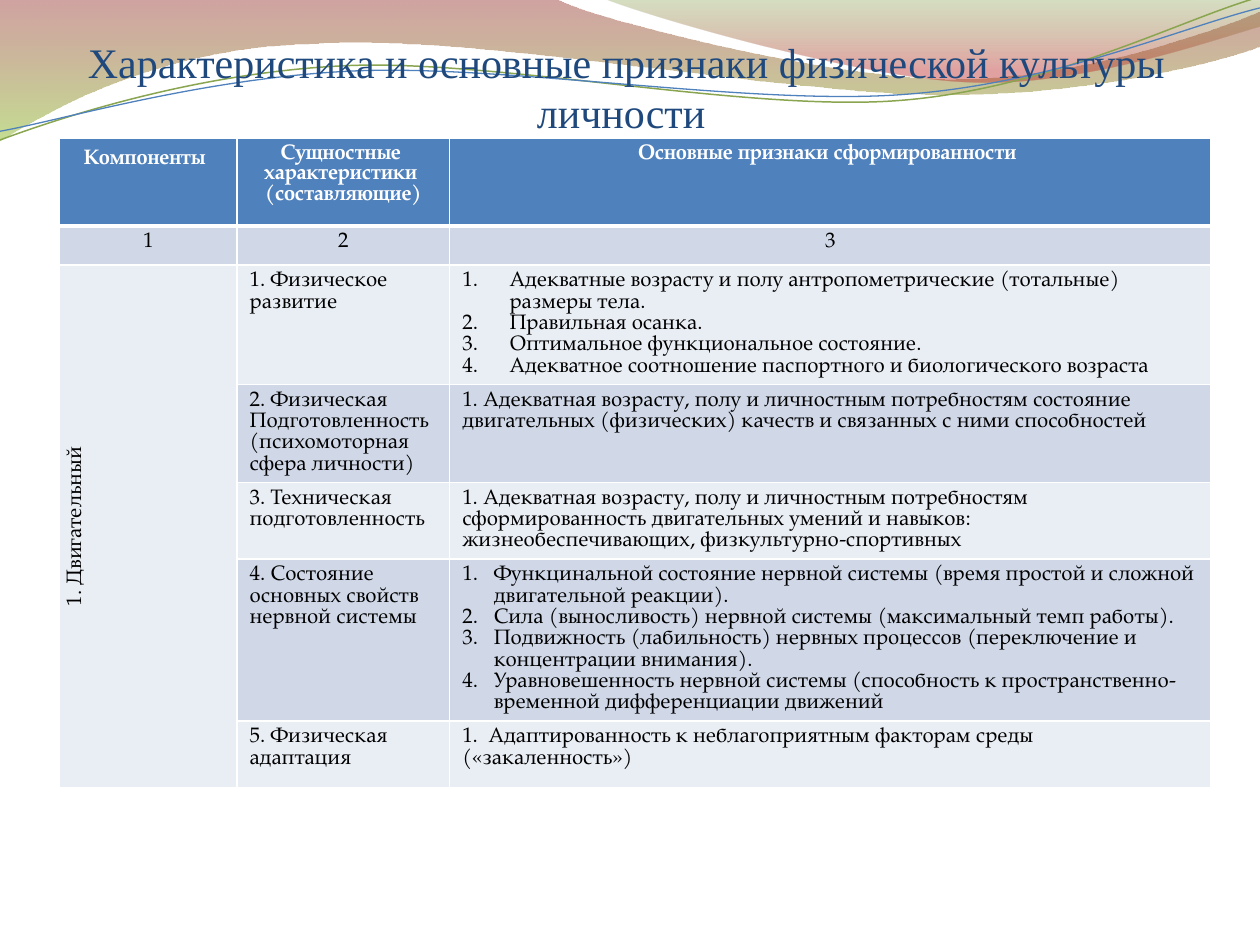
from lxml import etree
from pptx import Presentation
from pptx import util as u
from pptx.dml.color import RGBColor
from pptx.enum import text
from pptx.oxml import ns

Pt = u.Pt


def color(code):
    return RGBColor.from_string(code)


def node(parent, tag, **attrs):
    return etree.SubElement(parent, ns.qn(tag), attrs)


class Deck:
    head, body = "Times New Roman", "TeX Gyre Pagella"
    navy, blue, white, black = "1F497D", "4F81BD", "FFFFFF", "000000"
    bands = ("D0D8E8", "E9EDF4")
    pitch = 12.2

    def __init__(self, prs):
        self.slide = prs.slides.add_slide(prs.slide_layouts[6])

    def outline(self, start, parts, close):
        """Parts are lines (2 numbers) or Bezier curves (6 numbers)."""
        dots = [part[i:i + 2] for part in parts for i in range(0, len(part), 2)]
        free = self.slide.shapes.build_freeform(
            start[0] * 100, start[1] * 100, scale=Pt(1) / 100)
        free.add_line_segments([(x * 100, y * 100) for x, y in dots], close=close)
        shape = free.convert_to_shape()
        shape.shadow.inherit = False
        # Join each three steps of a curve into one Bezier
        steps = iter(list(shape._element.iter(ns.qn("a:lnTo"))))
        for part in parts:
            bend = next(steps)
            if len(part) == 6:
                bend.tag = ns.qn("a:cubicBezTo")
                for _ in range(2):
                    step = next(steps)
                    bend.append(step[0])
                    step.getparent().remove(step)
        return shape

    def wave(self, start, parts, stops):
        shape = self.outline(start, parts, True)
        shape.line.fill.background()
        shape.fill.gradient()
        shape.fill.gradient_angle = 270
        for stop, (pos, code, _) in zip(shape.fill.gradient_stops, stops):
            stop.position = pos
            stop.color.rgb = color(code)
        tags = shape._element.spPr.iter(ns.qn("a:srgbClr"))
        for tag, (_, _, alpha) in zip(tags, stops):
            node(tag, "a:alpha", val=str(alpha * 1000))

    def curve(self, start, parts, code, width):
        shape = self.outline(start, parts, False)
        shape.fill.background()
        shape.line.color.rgb = color(code)
        shape.line.width = Pt(width)

    def run(self, para, words, size, font, code, bold=False):
        run = para.add_run()
        run.text = words
        run.font.size, run.font.name, run.font.bold = Pt(size), font, bold
        run.font.color.rgb = color(code)

    def title(self, words, box):
        frame = self.slide.shapes.add_textbox(*map(Pt, box)).text_frame
        frame.word_wrap = True
        frame.vertical_anchor = text.MSO_ANCHOR.BOTTOM
        frame.margin_left = frame.margin_right = frame.margin_bottom = 0
        para = frame.paragraphs[0]
        para.alignment = text.PP_ALIGN.CENTER
        self.run(para, words, 24, self.head, self.navy)

    def number(self, para, indent):
        props = para._p.get_or_add_pPr()
        props.set("marL", str(Pt(indent)))
        props.set("indent", str(-Pt(indent)))
        node(props, "a:buFont", typeface="+mj-lt")
        node(props, "a:buAutoNum", type="arabicPeriod")

    def cell(self, cell, lines, fill, code, bold=False, center=False, indent=0, base=1):
        props = cell._tc.get_or_add_tcPr()
        for side, width in zip("LRTB", (1, 1, 1, base)):
            line = node(props, "a:ln" + side, w=str(Pt(width)))
            node(node(line, "a:solidFill"), "a:srgbClr", val=self.white)
        cell.fill.solid()
        cell.fill.fore_color.rgb = color(fill)
        for i, words in enumerate(lines):
            frame = cell.text_frame
            para = frame.add_paragraph() if i else frame.paragraphs[0]
            if center:
                para.alignment = text.PP_ALIGN.CENTER
            if not bold:
                para.line_spacing = Pt(self.pitch)
            if indent:
                self.number(para, indent)
            self.run(para, words, 12, self.body, code, bold)

    def table(self, top, rows, box, widths, heights):
        grid = self.slide.shapes.add_table(
            len(rows) + 1, len(top), *map(Pt, box)).table
        for col, width in zip(grid.columns, widths):
            col.width = Pt(width)
        for row, height in zip(grid.rows, heights):
            row.height = Pt(height)
        # Header row
        for c, lines in enumerate(top):
            self.cell(grid.cell(0, c), lines, self.blue, self.white, True, True, base=3)
        para = grid.cell(0, 0).text_frame.paragraphs[0]
        self.run(para, " ", 16, self.body, self.white, True)
        # Banded rows; the first column keeps the light band below the numbers
        for r, (indent, *cells) in enumerate(rows):
            for c, lines in enumerate(cells):
                band = self.bands[1 if r and not c else r % 2]
                self.cell(grid.cell(r + 1, c), lines, band, self.black,
                          center=not r or not c, indent=indent if c == 2 else 0)
        # Upright label over all the trait rows
        label = grid.cell(2, 0)
        label.merge(grid.cell(len(rows), 0))
        label.vertical_anchor = text.MSO_ANCHOR.MIDDLE
        label._tc.get_or_add_tcPr().set("vert", "vert270")


TOP = [
    ["Компоненты"],
    ["Сущностные ", "характеристики ", "(составляющие)"],
    ["Основные признаки сформированности "],
]
# Number indent, then the lines of each cell
ROWS = [
    (0, ["1"], ["2"], ["3"]),
    (27, ["1. Двигательный"], ["1. Физическое развитие"], [
        "Адекватные возрасту и полу антропометрические (тотальные) размеры тела.",
        "Правильная осанка.",
        "Оптимальное функциональное состояние.",
        "Адекватное соотношение паспортного и биологического возраста"]),
    (0, [], ["2. Физическая", "Подготовленность", "(психомоторная", "сфера личности)"], [
        "1. Адекватная возрасту, полу и личностным потребностям состояние "
        "двигательных (физических) качеств и связанных с ними способностей"]),
    (0, [], ["3. Техническая", "подготовленность"], [
        "1. Адекватная возрасту, полу и личностным потребностям "
        "сформированность двигательных умений и навыков: "
        "жизнеобеспечивающих, физкультурно-спортивных"]),
    (18, [], ["4. Состояние основных свойств нервной системы"], [
        "Функцинальной состояние нервной системы (время простой и сложной "
        "двигательной реакции).",
        "Сила (выносливость) нервной системы (максимальный темп работы).",
        "Подвижность (лабильность) нервных процессов (переключение и "
        "концентрации внимания).",
        "Уравновешенность нервной системы (способность к "
        "пространственно-временной дифференциации движений"]),
    (0, [], ["5. Физическая адаптация"], [
        "1.  Адаптированность к неблагоприятным факторам среды («закаленность»)"]),
]


def main():
    prs = Presentation()
    prs.slide_width, prs.slide_height = Pt(720), Pt(540)
    deck = Deck(prs)

    # Waves across the top
    deck.wave((0, 0), [
        (317, -1), (343, 12, 478, 45, 546, 45), (614, 45, 690, 19, 720, 6.5),
        (721, 26), (708, 32, 626, 55, 537, 54), (448, 54, 275, 20, 185, 24.5),
        (93, 26, 33, 60, -1, 81)], [(0, "973330", 45), (1, "95C238", 55)])
    deck.wave((345, -1), [
        (366, 8, 491, 45, 554, 47), (616, 50, 692, 23, 720, 15), (720, 0)],
        [(0, "769537", 30), (0.8, "BE3330", 45)])
    deck.curve((0, 80), [
        (35, 67, 114, 41, 199, 37.5), (284, 34, 427, 64, 513, 57.5),
        (600, 51, 675, 11, 719, -1.5)], "89A54F", 0.85)
    deck.curve((0, 75), [
        (34, 69, 118, 44, 204, 40.5), (290, 37, 430, 60.5, 516, 54),
        (602, 48, 677, 15, 720, 4.5)], "4F81BD", 0.75)

    # Title and table
    deck.title("Характеристика и основные признаки физической культуры личности ",
               (34, 16.5, 648, 62))
    deck.table(TOP, ROWS, (34, 78.8, 658, 414), (101.5, 121.5, 435),
               [50.2, 22.3] + [38.2] * 5)
    prs.save("out.pptx")


if __name__ == "__main__":
    main()
